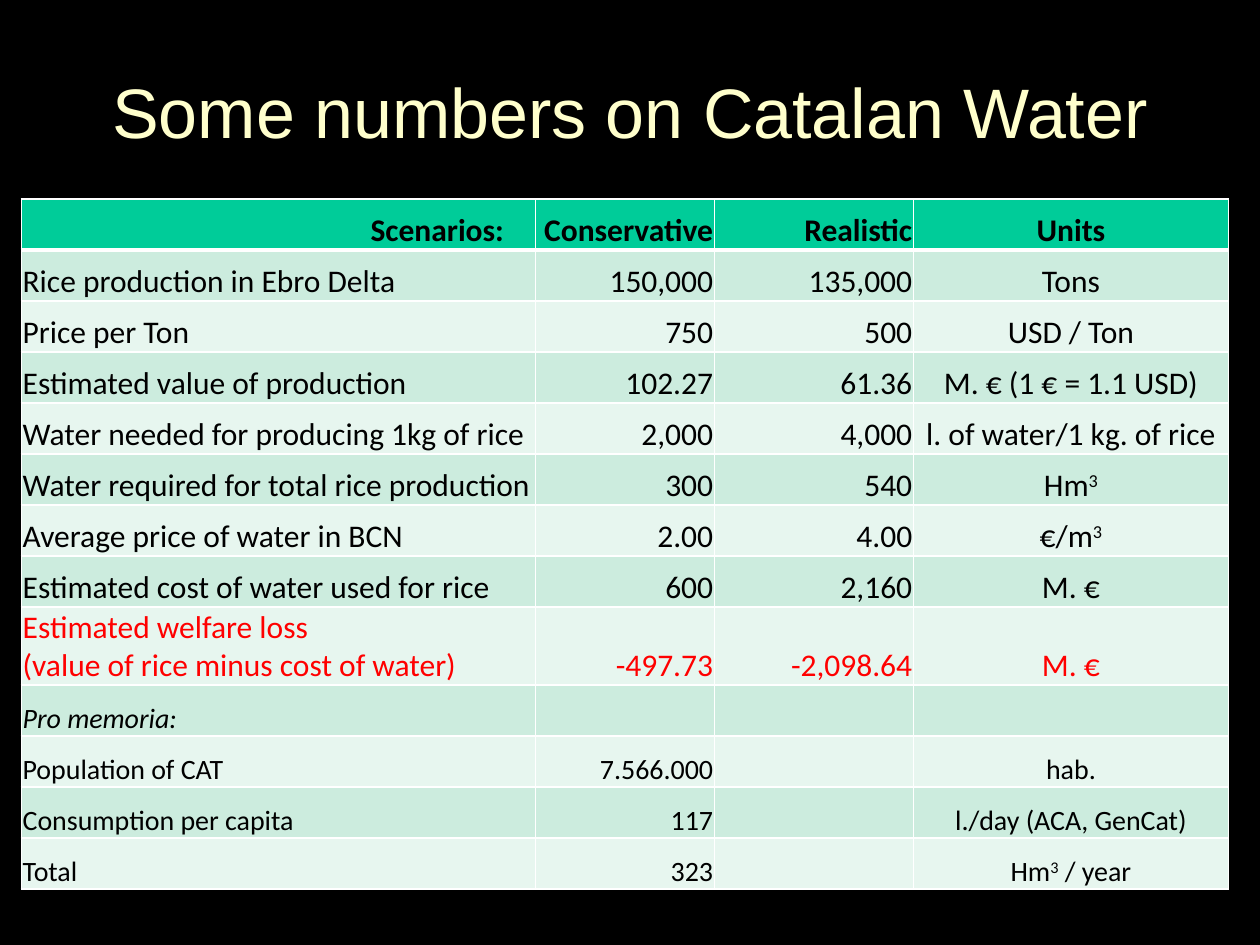
import dataclasses

import lxml.etree
import pptx
import pptx.dml.color
import pptx.enum.text
import pptx.oxml.ns
import pptx.util

Inches = pptx.util.Inches
Pt = pptx.util.Pt
Align = pptx.enum.text.PP_ALIGN
Anchor = pptx.enum.text.MSO_ANCHOR


@dataclasses.dataclass(frozen=True)
class Theme:
    back: str = "000000"
    title: str = "FFFFCC"
    ink: str = "000000"
    alert: str = "FF0000"
    head: str = "00CC99"
    bands: tuple = ("CCECDE", "E7F6EF")
    rule: str = "FFFFFF"
    title_font: str = "Arial"
    body_font: str = "Calibri"
    title_size: int = 40
    body_size: int = 18
    memo_size: int = 16


THEME = Theme()

# "^3" stands for a raised 3
ROWS = [
    ("Scenarios:", "Conservative", "Realistic", "Units"),
    ("Rice production in Ebro Delta", "150,000", "135,000", "Tons"),
    ("Price per Ton", "750", "500", "USD / Ton"),
    ("Estimated value of production", "102.27", "61.36", "M. € (1 € = 1.1 USD)"),
    ("Water needed for producing 1kg of rice", "2,000", "4,000", "l. of water/1 kg. of rice"),
    ("Water required for total rice production", "300", "540", "Hm^3"),
    ("Average price of water in BCN", "2.00", "4.00", "€/m^3"),
    ("Estimated cost of water used for rice", "600", "2,160", "M. €"),
    ("Estimated welfare loss\n(value of rice minus cost of water)", "-497.73", "-2,098.64", "M. €"),
    ("Pro memoria:", "", "", ""),
    ("Population of CAT", "7.566.000", "", "hab."),
    ("Consumption per capita", "117", "", "l./day (ACA, GenCat)"),
    ("Total", "323", "", "Hm^3 / year"),
]
LOSS, MEMO = 8, 9
WIDTHS = (4.08, 1.42, 1.58, 2.5)
ALIGNS = (Align.LEFT, Align.RIGHT, Align.RIGHT, Align.CENTER)


def color(code):
    return pptx.dml.color.RGBColor.from_string(code)


def style(font, name, size, code):
    font.name = name
    font.size = Pt(size)
    font.color.rgb = color(code)


def write(para, text):
    """Fill a paragraph, raising the 3 after a caret."""
    head, mark, tail = text.partition("^3")
    para.text = head
    if mark:
        run = para.add_run()
        run.text = "3"
        run._r.get_or_add_rPr().set("baseline", "30000")
    if tail:
        para.add_run().text = tail


def border(cell, widths):
    """Rule the four sides of a cell; widths go by side tag."""
    props = cell._tc.get_or_add_tcPr()
    tag = pptx.oxml.ns.qn
    for side, width in widths.items():
        line = lxml.etree.SubElement(props, tag("a:" + side), w=str(Pt(width)))
        fill = lxml.etree.SubElement(line, tag("a:solidFill"))
        lxml.etree.SubElement(fill, tag("a:srgbClr"), val=THEME.rule)


def add_title(slide, left, top, width, height):
    box = slide.shapes.add_textbox(Inches(left), Inches(top), Inches(width), Inches(height))
    frame = box.text_frame
    frame.word_wrap = True
    frame.vertical_anchor = Anchor.MIDDLE
    para = frame.paragraphs[0]
    para.text = "Some numbers on Catalan Water"
    para.alignment = Align.CENTER
    style(para.font, THEME.title_font, THEME.title_size, THEME.title)


def fill_cell(cell, text, row, col):
    # Rules and fill
    border(cell, {"lnL": 1, "lnR": 1, "lnT": 3 if row == 1 else 1, "lnB": 3 if row == 0 else 1})
    cell.fill.solid()
    cell.fill.fore_color.rgb = color(THEME.bands[(row - 1) % 2] if row else THEME.head)

    # Text
    cell.vertical_anchor = Anchor.BOTTOM
    cell.margin_left = cell.margin_right = cell.margin_top = Inches(0.01)
    cell.margin_bottom = 0
    para = cell.text_frame.paragraphs[0]
    write(para, text)
    para.alignment = ALIGNS[col]
    size = THEME.memo_size if row >= MEMO else THEME.body_size
    style(para.font, THEME.body_font, size, THEME.alert if row == LOSS else THEME.ink)
    para.font.bold = row == 0
    para.font.italic = row == MEMO


def add_grid(slide, left, top, width, height):
    shape = slide.shapes.add_table(
        len(ROWS), len(WIDTHS), Inches(left), Inches(top), Inches(width), Inches(height))
    table = shape.table
    table.first_row = table.horz_banding = False

    # The two-line row is taller; the others share the rest
    tall = 0.62
    even = (height - tall) / (len(ROWS) - 1)
    for col, share in enumerate(WIDTHS):
        table.columns[col].width = Inches(width * share / sum(WIDTHS))
    for row, texts in enumerate(ROWS):
        table.rows[row].height = Inches(tall if row == LOSS else even)
        for col, text in enumerate(texts):
            fill_cell(table.cell(row, col), text, row, col)

    # The first heading stands right, clear of the edge
    first = table.cell(0, 0)
    first.margin_right = Inches(0.25)
    first.text_frame.paragraphs[0].alignment = Align.RIGHT


def main():
    deck = pptx.Presentation()
    deck.slide_width = Inches(10)
    deck.slide_height = Inches(7.5)
    slide = deck.slides.add_slide(deck.slide_layouts[6])
    slide.background.fill.solid()
    slide.background.fill.fore_color.rgb = color(THEME.back)
    add_title(slide, 0.75, 0.25, 8.5, 1.25)
    add_grid(slide, 0.17, 1.58, 9.58, 5.48)
    deck.save("out.pptx")


if __name__ == "__main__":
    main()
